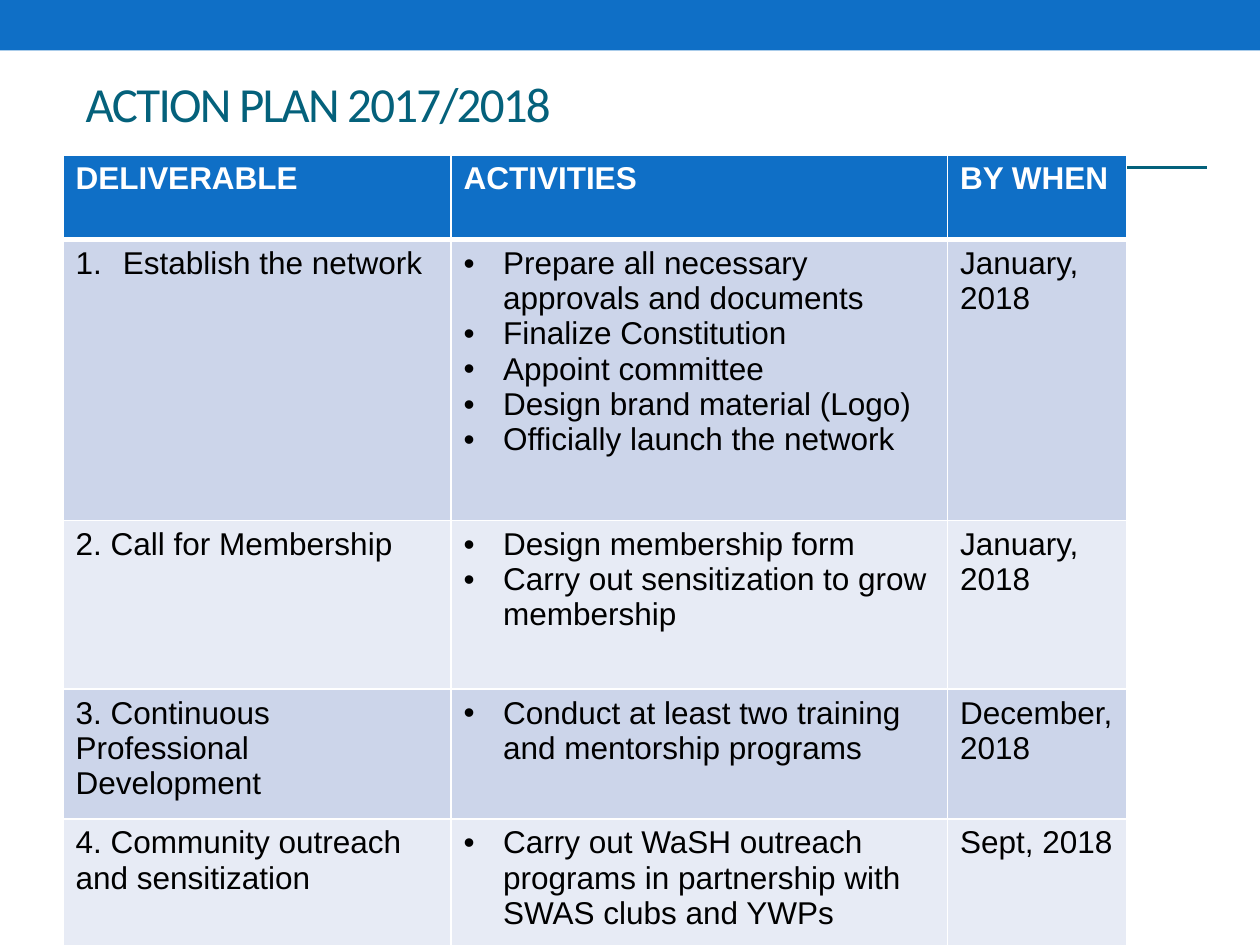
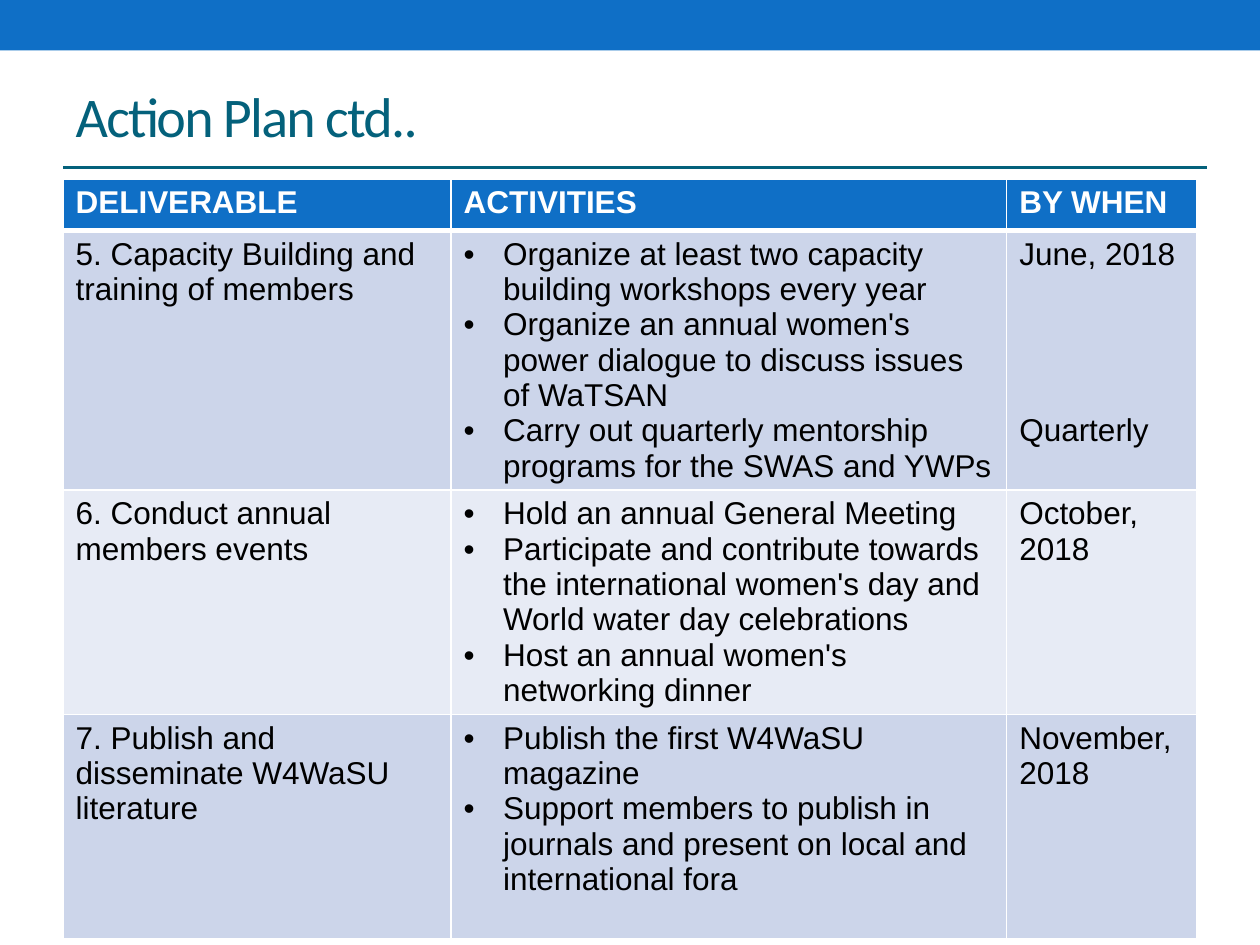
from dataclasses import dataclass

from lxml.etree import SubElement
from pptx import Presentation
from pptx.dml.color import RGBColor
from pptx.enum.shapes import MSO_CONNECTOR, MSO_SHAPE
from pptx.enum.text import MSO_ANCHOR, MSO_AUTO_SIZE, PP_ALIGN
from pptx.oxml.ns import qn
from pptx.util import Inches, Pt


@dataclass(frozen=True)
class Theme:
    band: str = "0F6FC6"
    title: str = "04617B"
    header_text: str = "FFFFFF"
    body_text: str = "000000"
    border: str = "FFFFFF"
    stripes: tuple = ("CCD5EA", "E7EBF5")
    title_font: str = "Calibri"
    table_font: str = "Arial"
    table_size: float = 18
    table_line: float = 20.1
    border_width: float = 1
    header_border_width: float = 3
    rule_width: float = 1.5


THEME = Theme()
SLIDE_COLUMNS, SLIDE_ROWS = 100, 75
LEFT_EDGE = 5
HEADINGS = ("DELIVERABLE", "ACTIVITIES", "BY WHEN")

FIRST_PLAN = [
    (["Establish the network"],
     ["Prepare all necessary approvals and documents", "Finalize Constitution",
      "Appoint committee", "Design brand material (Logo)",
      "Officially launch the network"],
     ["January, 2018"]),
    (["2. Call for Membership"],
     ["Design membership form", "Carry out sensitization to grow membership"],
     ["January, 2018"]),
    (["3. Continuous Professional Development"],
     ["Conduct at least two training and mentorship programs"],
     ["December, 2018"]),
    (["4. Community outreach and sensitization"],
     ["Carry out WaSH outreach programs in partnership with SWAS clubs and YWPs"],
     ["Sept, 2018"]),
]
SECOND_PLAN = [
    (["5. Capacity Building and training of members"],
     ["Organize at least two capacity building workshops every year",
      "Organize an annual women's power dialogue to discuss issues of WaTSAN",
      "Carry out quarterly mentorship programs for the SWAS and YWPs"],
     ["June, 2018", "Quarterly"]),
    (["6. Conduct annual members events"],
     ["Hold an annual General Meeting",
      "Participate and contribute towards the international women's day "
      "and World water day celebrations",
      "Host an annual women's networking dinner"],
     ["October, 2018"]),
    (["7. Publish and disseminate W4WaSU literature"],
     ["Publish the first W4WaSU magazine",
      "Support members to publish in journals and present on local "
      "and international fora"],
     ["November, 2018"]),
]


def grid(steps):
    """Length of a number of grid steps, ten to the inch."""
    return Inches(steps / 10)


def color(code):
    return RGBColor.from_string(code)


def add_master_decor(deck, page):
    """Draw the band and the title rule, then move them to the slide master."""
    band = page.shapes.add_shape(MSO_SHAPE.RECTANGLE, 0, 0, grid(SLIDE_COLUMNS), grid(4))
    band.shadow.inherit = False
    band.fill.solid()
    band.fill.fore_color.rgb = color(THEME.band)
    band.line.fill.background()

    rule = page.shapes.add_connector(
        MSO_CONNECTOR.STRAIGHT, grid(LEFT_EDGE), grid(13.3), grid(95.8), grid(13.3))
    rule.line.color.rgb = color(THEME.title)
    rule.line.width = Pt(THEME.rule_width)
    SubElement(rule.element.spPr, qn("a:effectLst"))

    tree = deck.slide_master.shapes.element
    for position, shape in enumerate((band, rule), start=2):
        tree.insert(position, shape.element)


def set_title(page, text, left, top, size):
    box = page.shapes.title
    box.left, box.top, box.width, box.height = map(grid, (left, top, 90, 8.3))
    frame = box.text_frame
    frame.auto_size = MSO_AUTO_SIZE.NONE
    frame.vertical_anchor = MSO_ANCHOR.MIDDLE
    para = frame.paragraphs[0]
    para.alignment = PP_ALIGN.LEFT
    span = para.add_run()
    span.text = text
    span.font.name = THEME.title_font
    span.font.size = Pt(size)
    span.font.color.rgb = color(THEME.title)
    span.font._element.set("spc", "-100")


def add_marker(para, marker, indent):
    """Hang the paragraph on a bullet, or on a number if marker is "1."."""
    properties = para._p.get_or_add_pPr()
    properties.set("marL", str(grid(indent)))
    properties.set("indent", str(-grid(indent)))
    SubElement(properties, qn("a:buFont"), typeface=THEME.table_font)
    if marker == "1.":
        SubElement(properties, qn("a:buAutoNum"), type="arabicPeriod")
    else:
        SubElement(properties, qn("a:buChar"), char=marker)


def write_cell(cell, texts, *, ink, bold=False, marker=None, indent=0, gap_lines=0):
    for index, text in enumerate(texts):
        frame = cell.text_frame
        para = frame.add_paragraph() if index else frame.paragraphs[0]
        if marker:
            add_marker(para, marker, indent)
        if index and gap_lines:
            para.space_before = Pt(gap_lines * THEME.table_line)
        span = para.add_run()
        span.text = text
        span.font.name = THEME.table_font
        span.font.size = Pt(THEME.table_size)
        span.font.bold = bold
        span.font.color.rgb = color(ink)


def paint_cell(cell, fill, top=THEME.border_width, bottom=THEME.border_width):
    """Set the cell's borders (widths in points) and its fill."""
    properties = cell._tc.get_or_add_tcPr()
    side = THEME.border_width
    for edge, width in (("lnL", side), ("lnR", side), ("lnT", top), ("lnB", bottom)):
        line = SubElement(properties, qn(f"a:{edge}"), w=str(Pt(width)))
        SubElement(SubElement(line, qn("a:solidFill")), qn("a:srgbClr"), val=THEME.border)
    cell.fill.solid()
    cell.fill.fore_color.rgb = color(fill)


def add_plan_table(page, plan, top, columns, rows, first_marker=None):
    table = page.shapes.add_table(
        len(rows), len(columns), grid(LEFT_EDGE), grid(top),
        grid(sum(columns)), grid(sum(rows))).table
    for column, width in zip(table.columns, columns):
        column.width = grid(width)
    for row, height in zip(table.rows, rows):
        row.height = grid(height)

    heavy = THEME.header_border_width
    for index, heading in enumerate(HEADINGS):
        cell = table.cell(0, index)
        paint_cell(cell, THEME.band, bottom=heavy)
        write_cell(cell, [heading], ink=THEME.header_text, bold=True)

    for number, entry in enumerate(plan, start=1):
        first = number == 1
        formats = (
            {"marker": first_marker if first else None, "indent": 3.75},
            {"marker": "•", "indent": 3.13},
            {"gap_lines": 4},
        )
        for index, (texts, style) in enumerate(zip(entry, formats)):
            cell = table.cell(number, index)
            paint_cell(cell, THEME.stripes[(number - 1) % 2],
                       top=heavy if first else THEME.border_width)
            write_cell(cell, texts, ink=THEME.body_text, **style)


def main():
    deck = Presentation()
    deck.slide_width, deck.slide_height = grid(SLIDE_COLUMNS), grid(SLIDE_ROWS)
    title_only = deck.slide_layouts[5]

    page = deck.slides.add_slide(title_only)
    add_master_decor(deck, page)
    set_title(page, "ACTION PLAN 2017/2018", left=5.8, top=4, size=28)
    add_plan_table(page, FIRST_PLAN, top=12.3, columns=(30.8, 39.4, 14.2),
                   rows=(6.7, 22.3, 13.4, 10.3, 16.2), first_marker="1.")

    page = deck.slides.add_slide(title_only)
    set_title(page, "Action Plan ctd..", left=LEFT_EDGE, top=5, size=32)
    add_plan_table(page, SECOND_PLAN, top=14.2, columns=(30.8, 44.1, 15.1),
                   rows=(4.1, 20.5, 17.8, 17.8))

    deck.save("out.pptx")


if __name__ == "__main__":
    main()
